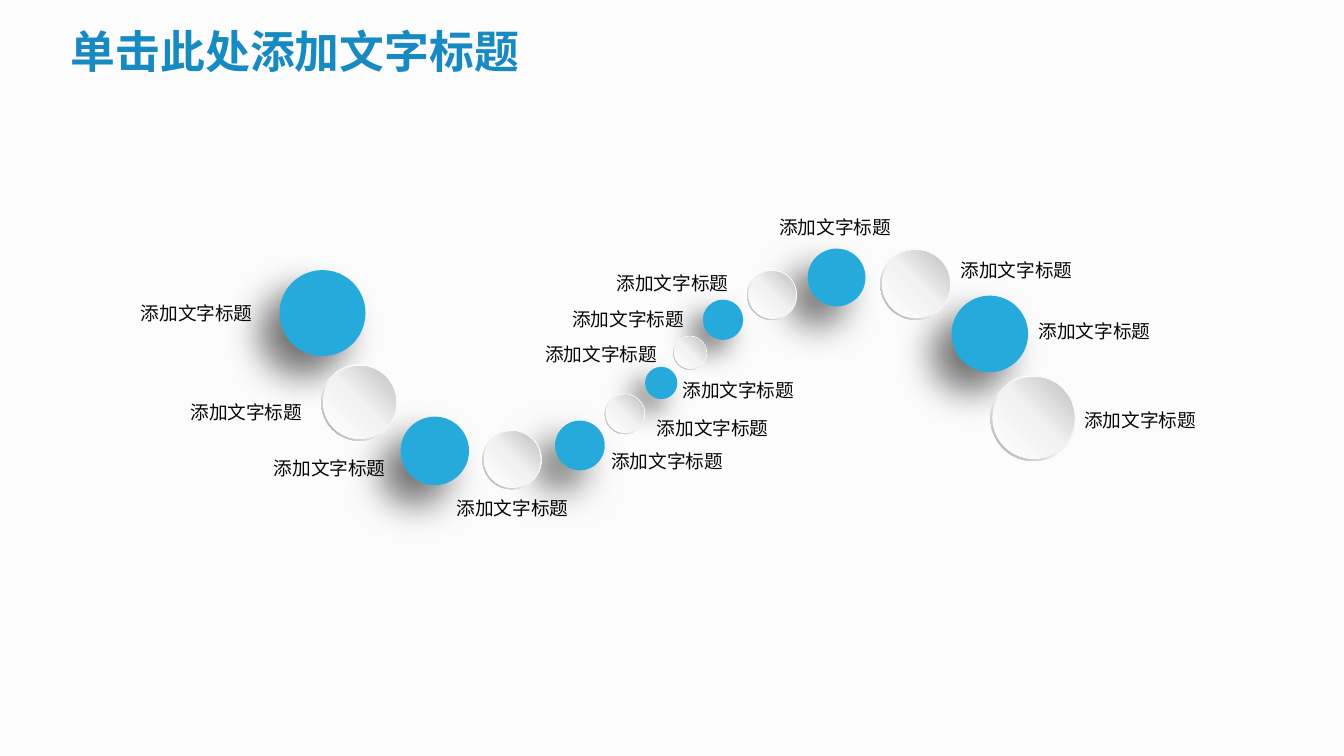
"""Build a slide with a wave of alternating blue and silver discs, each with a label."""
from lxml import etree
from pptx import Presentation
from pptx import util as u
from pptx.dml.color import RGBColor
from pptx.enum import shapes, text
from pptx.oxml import parse_xml
from pptx.oxml.ns import nsdecls, qn

TITLE = "单击此处添加文字标题"
LABEL = "添加文字标题"
FONT = "Noto Sans CJK SC"
BACKGROUND = RGBColor(0xFC, 0xFC, 0xFC)
TITLE_BLUE = RGBColor(0x17, 0x8A, 0xC1)
DISC_BLUE = RGBColor(0x26, 0xAA, 0xDB)
INK = RGBColor(0x08, 0x08, 0x08)
WHITE = RGBColor(0xFF, 0xFF, 0xFF)
PALE = RGBColor(0xF2, 0xF2, 0xF2)
SILVER = RGBColor(0xBF, 0xBF, 0xBF)
GREY = RGBColor(0xA6, 0xA6, 0xA6)
BLACK = RGBColor(0, 0, 0)

RING = ([(0, WHITE), (55, PALE), (100, GREY)], 135)
FACE = ([(0, WHITE), (51, PALE), (100, SILVER)], 315)
FACE_SHARE = 0.95
RING_WIDTH = 0.049
LARGE_SHADOW = (54, 20, 15)
SMALL_SHADOW = (50, 15, 10)

# (left, top, diameter), (label left, label top); blue and silver alternate
DISCS = [
    ((2.08, 2.01, 0.64), (0.95, 2.20)),
    ((2.39, 2.71, 0.57), (1.32, 2.93)),
    ((2.98, 3.10, 0.51), (1.94, 3.35)),
    ((3.59, 3.20, 0.44), (3.30, 3.65)),
    ((4.13, 3.13, 0.37), (4.45, 3.30)),
    ((4.50, 2.93, 0.30), (4.79, 3.05)),
    ((4.80, 2.73, 0.24), (4.98, 2.77)),
    ((5.01, 2.50, 0.25), (3.96, 2.50)),
    ((5.23, 2.23, 0.30), (4.16, 2.24)),
    ((5.56, 2.01, 0.37), (4.49, 1.97)),
    ((6.01, 1.85, 0.43), (5.70, 1.56)),
    ((6.55, 1.85, 0.53), (7.05, 1.88)),
    ((7.08, 2.20, 0.57), (7.63, 2.33)),
    ((7.37, 2.79, 0.64), (7.97, 2.99)),
]


def add_text(s, words, left, top, width, height, size, color, bold=False):
    sp = s.shapes.add_textbox(*map(u.Inches, (left, top, width, height)))
    tf = sp.text_frame
    tf.word_wrap = False
    tf.auto_size = text.MSO_AUTO_SIZE.SHAPE_TO_FIT_TEXT
    p = tf.paragraphs[0]
    p.text = words
    font = p.font
    font.size, font.bold, font.name = u.Pt(size), bold, FONT
    font.color.rgb = color
    etree.SubElement(font._element, qn("a:ea"), typeface=FONT)


def add_round(parent, kind, left, top, size):
    sp = parent.shapes.add_shape(kind, *map(u.Inches, (left, top, size, size)))
    sp.shadow.inherit = False
    sp.line.fill.background()
    return sp


def set_gradient(sp, stops, angle):
    sp.fill.background()
    marks = "".join(f'<a:gs pos="{pos * 1000}"><a:srgbClr val="{color}"/></a:gs>'
                    for pos, color in stops)
    gradient = parse_xml(f'<a:gradFill {nsdecls("a")} rotWithShape="1"><a:gsLst>{marks}</a:gsLst>'
                         f'<a:lin ang="{angle * 60000}" scaled="0"/></a:gradFill>')
    spPr = sp._element.spPr
    spPr.replace(spPr.find(qn("a:noFill")), gradient)


def add_blue(s, left, top, size):
    sp = add_round(s, shapes.MSO_SHAPE.OVAL, left, top, size)
    sp.fill.solid()
    sp.fill.fore_color.rgb = DISC_BLUE
    alpha, blur, dist = SMALL_SHADOW if size <= 0.3 else LARGE_SHADOW
    sp._element.spPr.find(qn("a:effectLst")).append(parse_xml(
        f'<a:outerShdw {nsdecls("a")} blurRad="{u.Pt(blur)}" dist="{u.Pt(dist)}" '
        f'dir="{135 * 60000}" algn="tr" rotWithShape="0"><a:srgbClr val="{BLACK}">'
        f'<a:alpha val="{alpha * 1000}"/></a:srgbClr></a:outerShdw>'))


def add_silver(s, left, top, size):
    group = s.shapes.add_group_shape()
    ring = add_round(group, shapes.MSO_SHAPE.DONUT, left, top, size)
    ring.adjustments[0] = RING_WIDTH
    set_gradient(ring, *RING)
    inset = size * (1 - FACE_SHARE) / 2
    face = add_round(group, shapes.MSO_SHAPE.OVAL, left + inset, top + inset, size * FACE_SHARE)
    set_gradient(face, *FACE)


def main():
    prs = Presentation()
    prs.slide_width = u.Inches(10)
    prs.slide_height = prs.slide_width * 9 // 16
    s = prs.slides.add_slide(prs.slide_layouts[6])
    s.background.fill.solid()
    s.background.fill.fore_color.rgb = BACKGROUND
    add_text(s, TITLE, 0.43, 0.13, 3.57, 0.5, 24, TITLE_BLUE, True)
    for _, (left, top) in DISCS:
        add_text(s, LABEL, left, top, 1.04, 0.27, 10, INK)
    for disc, _ in DISCS[::2]:
        add_blue(s, *disc)
    for disc, _ in DISCS[1::2]:
        add_silver(s, *disc)
    prs.save("out.pptx")


if __name__ == "__main__":
    main()
